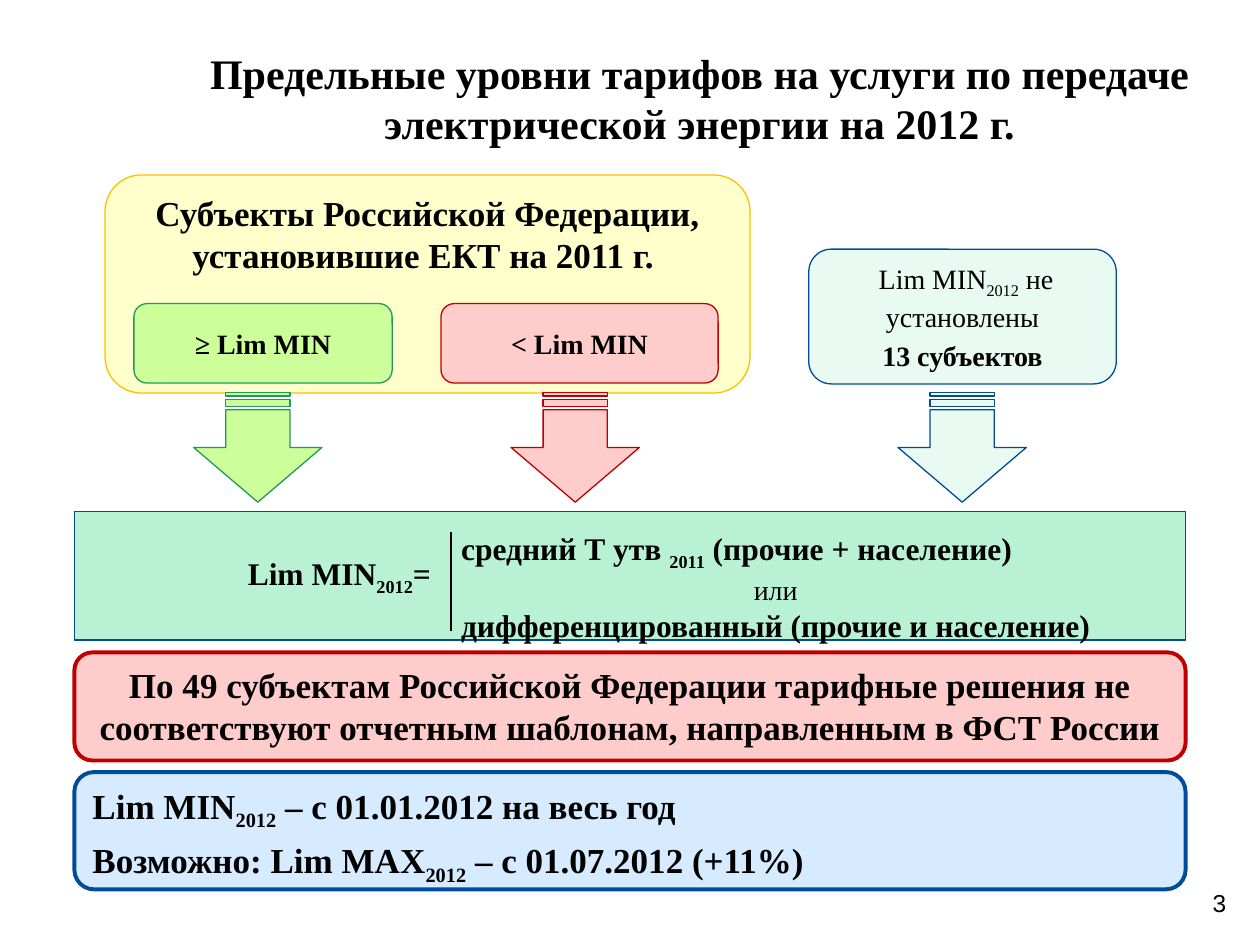
import pptx
import pptx.dml.color
import pptx.enum.shapes
import pptx.enum.text
import pptx.oxml
import pptx.oxml.ns
import pptx.util
from dataclasses import dataclass

Pt = pptx.util.Pt
Kind = pptx.enum.shapes.MSO_SHAPE
Align = pptx.enum.text.PP_ALIGN
Anchor = pptx.enum.text.MSO_ANCHOR
rgb = pptx.dml.color.RGBColor.from_string


@dataclass(frozen=True)
class Theme:
    font: str = "Times New Roman"
    number_font: str = "Arial"
    black: str = "000000"
    # Fill and line pairs
    yellow: tuple = ("FFFFCC", "FFC000")
    green: tuple = ("CCFF99", "1F995D")
    red: tuple = ("FFCCCC", "C00000")
    mint: tuple = ("E8FAF1", "004C99")
    formula: tuple = ("B9F1D5", "004C99")
    blue: tuple = ("D6EBFF", "004C99")
    # Type sizes
    title: int = 24
    heading: int = 20
    body: int = 18
    label: int = 16
    number: int = 14


theme = Theme()
presentation = pptx.Presentation()
presentation.slide_width, presentation.slide_height = Pt(720), Pt(540)
slide = presentation.slides.add_slide(presentation.slide_layouts[5])


def write(shape, text, size=theme.label, bold=True, align=Align.CENTER, anchor=Anchor.TOP,
          font=theme.font, space=0, first=True, wrap=True):
    """Write one paragraph; text between bars is subscript."""
    frame = shape.text_frame
    frame.word_wrap, frame.vertical_anchor = wrap, anchor
    paragraph = frame.paragraphs[0] if first else frame.add_paragraph()
    paragraph.alignment = align
    paragraph.space_before = Pt(space)
    for index, part in enumerate(text.split("|")):
        run = paragraph.add_run()
        run.text = part
        run.font.name, run.font.size, run.font.bold = font, Pt(size), bold
        run.font.color.rgb = rgb(theme.black)
        if index % 2:
            run.font._element.set("baseline", "-25000")
    return paragraph


def add_block(kind, left, top, width, height, colors, line_width=0.75):
    shape = slide.shapes.add_shape(kind, Pt(left), Pt(top), Pt(width), Pt(height))
    shape.shadow.inherit = False
    shape.fill.solid()
    shape.fill.fore_color.rgb = rgb(colors[0])
    shape.line.color.rgb = rgb(colors[1])
    shape.line.width = Pt(line_width)
    return shape


# Title
title = slide.shapes.title
title.left, title.top, title.width, title.height = Pt(88), Pt(23), Pt(623.5), Pt(65.5)
write(title, "Предельные уровни тарифов на услуги по передаче электрической энергии на 2012 г.",
      size=theme.title, anchor=Anchor.MIDDLE)

# Regions with a set tariff, split by the limit
regions = add_block(Kind.ROUNDED_RECTANGLE, 60, 100, 368.6, 124.6, theme.yellow)
write(regions, "Субъекты Российской Федерации, установившие ЕКТ на 2011 г. ", size=theme.heading)
for text, left, width, colors in (("≥ Lim MIN", 76.5, 147.6, theme.green),
                                  ("< Lim MIN", 252, 158.4, theme.red)):
    group = add_block(Kind.ROUNDED_RECTANGLE, left, 173.5, width, 45.4, colors)
    write(group, text, anchor=Anchor.MIDDLE)

# Regions without a limit
no_limit = add_block(Kind.ROUNDED_RECTANGLE, 462.2, 142.4, 175.7, 77, theme.mint)
write(no_limit, " Lim MIN|2012| не установлены", bold=False, anchor=Anchor.MIDDLE)
write(no_limit, "13 субъектов", anchor=Anchor.MIDDLE, space=3.2, first=False)

# Arrows down to the formula
arrow_length, arrow_breadth = 62.6, 73.4
for center, colors in ((147.3, theme.green), (328.7, theme.red), (549.8, theme.mint)):
    arrow = add_block(Kind.STRIPED_RIGHT_ARROW, center - arrow_length / 2, 219,
                      arrow_length, arrow_breadth, colors)
    arrow.rotation = 90

# Full-width bands
band_left, band_width = 42.5, 635
formula = add_block(Kind.RECTANGLE, band_left, 292.4, band_width, 73.4, theme.formula)
paragraph = write(formula, "Lim MIN|2012|=", size=theme.body, align=Align.LEFT,
                  anchor=Anchor.MIDDLE)
paragraph._p.get_or_add_pPr().set("indent", str(Pt(92)))

mismatch = add_block(Kind.ROUNDED_RECTANGLE, band_left, 372.8, band_width, 61.8, theme.red, 2.25)
write(mismatch, "По 49 субъектам Российской Федерации тарифные решения не соответствуют "
      "отчетным шаблонам, направленным в ФСТ России", size=theme.heading)

dates = add_block(Kind.ROUNDED_RECTANGLE, band_left, 441.2, band_width, 67, theme.blue, 2.25)
write(dates, "Lim MIN|2012| – с 01.01.2012 на весь год", size=theme.heading, align=Align.LEFT)
write(dates, "Возможно: Lim MAX|2012| – с 01.07.2012 (+11%)", size=theme.heading,
      align=Align.LEFT, space=4, first=False)

# Formula options and their bar
options = slide.shapes.add_textbox(Pt(256.4), Pt(298.8), Pt(378), Pt(72.7))
write(options, "средний Т утв |2011| (прочие + население)", size=theme.body,
      align=Align.LEFT, wrap=False)
write(options, "или", bold=False, first=False, wrap=False)
write(options, "дифференцированный (прочие и население)", size=theme.body,
      align=Align.LEFT, first=False, wrap=False)

bar = slide.shapes.add_connector(pptx.enum.shapes.MSO_CONNECTOR.STRAIGHT,
                                 Pt(257.8), Pt(304), Pt(257.8), Pt(360.7))
bar.line.color.rgb = rgb(theme.black)
bar.line.width = Pt(1.5)
bar._element.spPr.append(pptx.oxml.parse_xml(
    f"<a:effectLst {pptx.oxml.ns.nsdecls('a')}/>"))

# Slide number
number = slide.shapes.add_textbox(Pt(558), Pt(504), Pt(149.8), Pt(23.8))
write(number, "3", size=theme.number, bold=False, align=Align.RIGHT, font=theme.number_font)

presentation.save("out.pptx")
